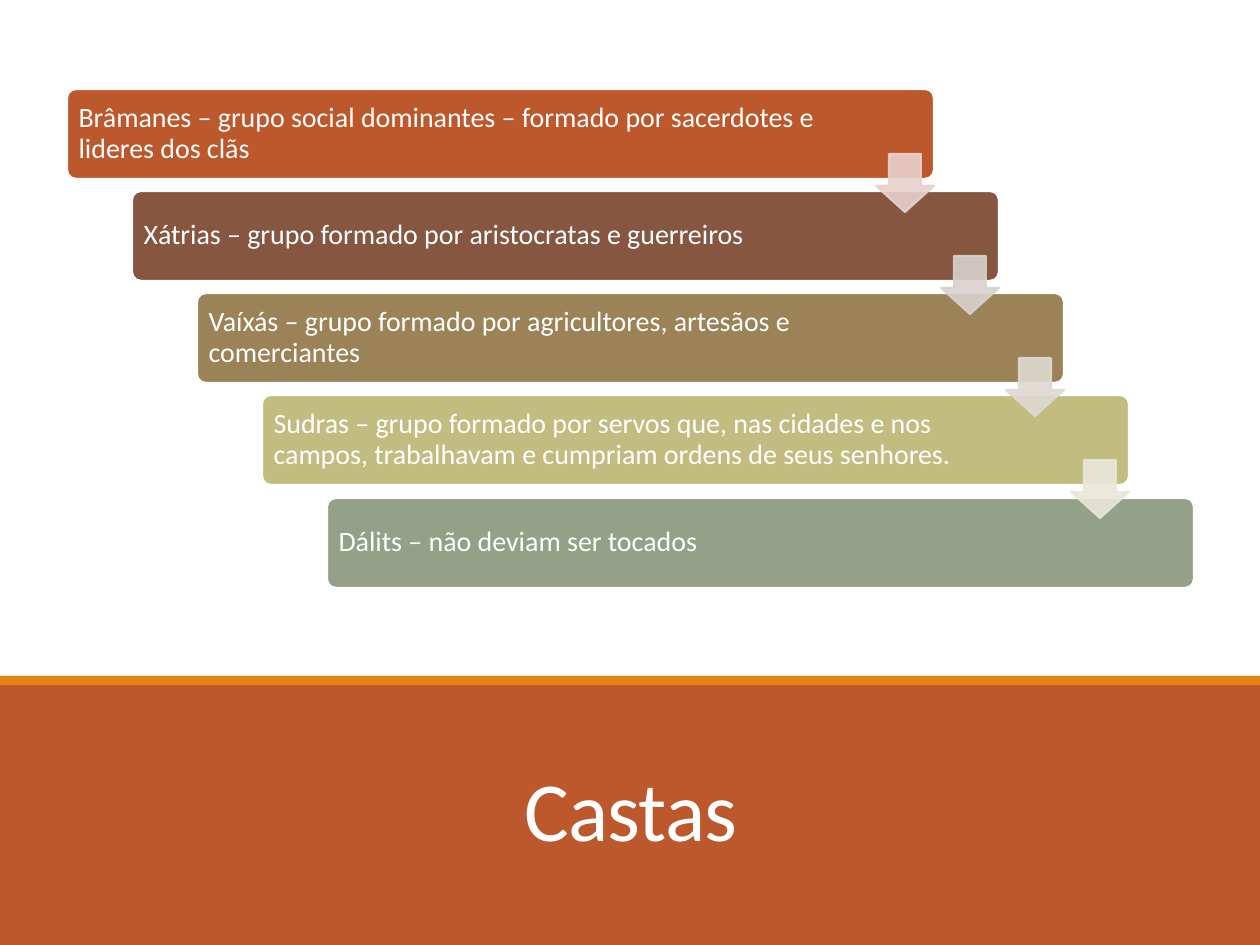
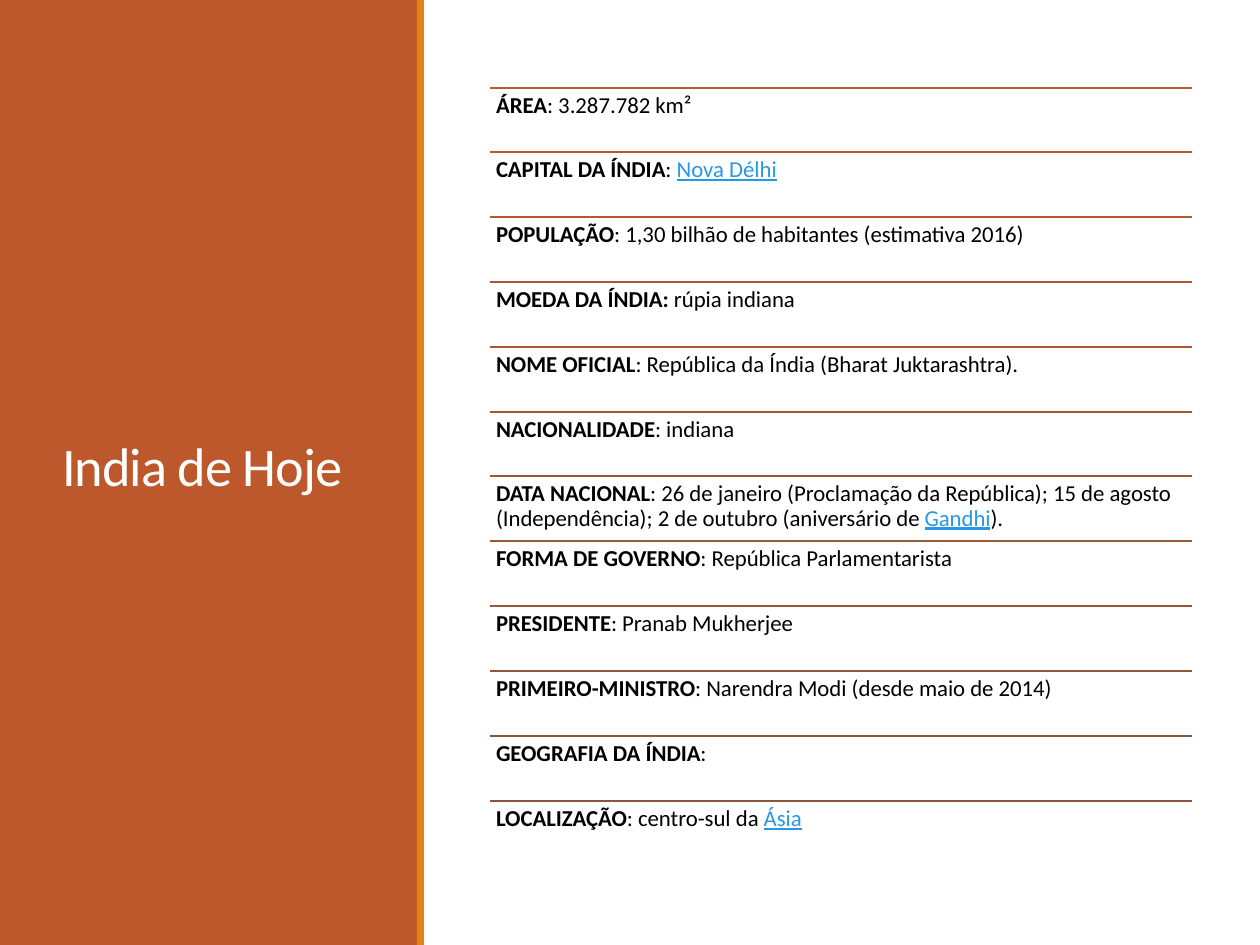
from lxml import etree
from pptx import Presentation
from pptx import util as u
from pptx.dml.color import RGBColor
from pptx.enum import shapes, text
from pptx.oxml.ns import qn

SCALE = u.Inches(1) / 126  # EMU in one px
WIDTH, HEIGHT = 1260, 945
FONT = "Calibri"
COLORS = {
    "panel": "BD582C", "accent": "E48312", "white": "FFFFFF",
    "black": "000000", "link": "2998E3", "last_rule": "865640",
}
TITLE_FORMAT = {"name": FONT, "bold": False, "color": "white"}
CASTE_FORMAT = {"name": FONT, "size": u.Pt(16), "color": "white"}
FACT_FORMATS = {
    "label": {"name": FONT, "size": u.Pt(13), "bold": True, "color": "black"},
    "plain": {"name": FONT, "size": u.Pt(13), "bold": False, "color": "black"},
    "link": {"name": FONT, "size": u.Pt(13), "bold": False, "color": "link",
             "underline": True},
}

# Text, bar colour, colour of the arrow to the next bar, right inset
CASTES = [
    ("Brâmanes – grupo social dominantes – formado por sacerdotes e lideres dos clãs",
     "BD582C", "E8D1CD", 111),
    ("Xátrias – grupo formado por aristocratas e guerreiros",
     "865640", "D9D1CF", 131),
    ("Vaíxás – grupo formado por agricultores, artesãos e comerciantes",
     "9B8357", "DED9D1", 131),
    ("Sudras – grupo formado por servos que, nas cidades e nos campos, "
     "trabalhavam e cumpriam ordens de seus senhores.",
     "C2BC80", "E9E7D8", 131),
    ("Dálits – não deviam ser tocados", "94A088", None, 131),
]

# Label, plain text, linked text, closing text
FACTS = [
    ("ÁREA", ": 3.287.782 km²"),
    ("CAPITAL DA ÍNDIA", ": ", "Nova Délhi"),
    ("POPULAÇÃO", ": 1,30 bilhão de habitantes (estimativa 2016)"),
    ("MOEDA DA ÍNDIA: ", "rúpia indiana"),
    ("NOME OFICIAL", ": República da Índia (Bharat Juktarashtra)."),
    ("NACIONALIDADE", ": indiana"),
    ("DATA NACIONAL", ": 26 de janeiro (Proclamação da República); 15 de agosto "
     "(Independência); 2 de outubro (aniversário de ", "Gandhi", ")."),
    ("FORMA DE GOVERNO", ": República Parlamentarista"),
    ("PRESIDENTE", ": Pranab Mukherjee"),
    ("PRIMEIRO-MINISTRO", ": Narendra Modi (desde maio de 2014)"),
    ("GEOGRAFIA DA ÍNDIA", ":"),
    ("LOCALIZAÇÃO", ": centro-sul da ", "Ásia"),
]
RUN_STYLES = ("label", "plain", "link", "plain")


def px(*lengths):
    return [u.Emu(round(length * SCALE)) for length in lengths]


def rgb(color):
    return RGBColor.from_string(COLORS.get(color, color))


def blend(start, end, share):
    """Mix two hex colours; share 0 gives start and 1 gives end."""
    pairs = zip(rgb(start), rgb(end))
    return "".join(f"{round(a + (b - a) * share):02X}" for a, b in pairs)


def add_run(paragraph, content, formats):
    run = paragraph.add_run()
    run.text = content
    for name, value in formats.items():
        if name == "color":
            run.font.color.rgb = rgb(value)
        else:
            setattr(run.font, name, value)
    return run


def set_frame(frame, anchor, insets):
    left, top, right, bottom = px(*insets)
    settings = {
        "word_wrap": True, "auto_size": text.MSO_AUTO_SIZE.NONE,
        "vertical_anchor": anchor, "margin_left": left, "margin_top": top,
        "margin_right": right, "margin_bottom": bottom,
    }
    for name, value in settings.items():
        setattr(frame, name, value)


def add_block(slide, kind, box, fill, line=None, adjustments=()):
    shape = slide.shapes.add_shape(kind, *px(*box))
    shape.shadow.inherit = False
    shape.fill.solid()
    shape.fill.fore_color.rgb = rgb(fill)
    if line:
        shape.line.color.rgb = rgb(line)
        shape.line.width = u.Pt(1.25)
    else:
        shape.line.fill.background()
    for index, value in enumerate(adjustments):
        shape.adjustments[index] = value
    return shape


def add_rule(slide, left, top, width, color):
    line = slide.shapes.add_connector(
        shapes.MSO_CONNECTOR.STRAIGHT, *px(left, top, left + width, top))
    line.line.color.rgb = rgb(color)
    line.line.width = u.Pt(1.25)
    etree.SubElement(line.element.spPr, qn("a:effectLst"))


def add_titled_slide(presentation, title, panel, stripe, box, size, align, anchor):
    """Add a slide with a coloured panel, its accent stripe and a title."""
    slide = presentation.slides.add_slide(presentation.slide_layouts[5])
    for area, color in ((panel, "panel"), (stripe, "accent")):
        add_block(slide, shapes.MSO_SHAPE.RECTANGLE, area, color)
    shape = slide.shapes.title
    shape.element.getparent().append(shape.element)  # in front of the panel
    shape.left, shape.top, shape.width, shape.height = px(*box)
    set_frame(shape.text_frame, anchor, (12, 6, 12, 6))
    paragraph = shape.text_frame.paragraphs[0]
    paragraph.alignment = align
    paragraph.line_spacing = 0.85
    run = add_run(paragraph, title, {**TITLE_FORMAT, "size": u.Pt(size)})
    run.font._element.set("spc", "-50")
    return slide


def add_caste_bar(slide, box, content, color, right_inset):
    bar = add_block(slide, shapes.MSO_SHAPE.ROUNDED_RECTANGLE, box, color,
                    "white", [0.1])
    set_frame(bar.text_frame, text.MSO_ANCHOR.MIDDLE, (9, 9, right_inset, 9))
    paragraph = bar.text_frame.paragraphs[0]
    paragraph.alignment = text.PP_ALIGN.LEFT
    paragraph.line_spacing = 0.9
    add_run(paragraph, content, CASTE_FORMAT)


def add_step_arrow(slide, box, color):
    arrow = add_block(slide, shapes.MSO_SHAPE.DOWN_ARROW, box, color, color,
                      [0.55, 0.45])
    for tone in arrow.element.spPr.iter(qn("a:srgbClr")):
        etree.SubElement(tone, qn("a:alpha"), val="90000")


def add_fact(slide, box, parts):
    shape = slide.shapes.add_textbox(*px(*box))
    set_frame(shape.text_frame, text.MSO_ANCHOR.TOP, (6, 6, 6, 6))
    paragraph = shape.text_frame.paragraphs[0]
    paragraph.line_spacing = 0.9
    for content, style in zip(parts, RUN_STYLES):
        add_run(paragraph, content, FACT_FORMATS[style])


def build_castes(presentation):
    slide = add_titled_slide(
        presentation, "Castas", (0, 683, WIDTH, 262), (0, 676, WIDTH, 9),
        (111, 723, 1040, 142), 48, text.PP_ALIGN.CENTER, text.MSO_ANCHOR.BOTTOM)
    bar_width, bar_height, arrow_size = 867, 90, 58
    corners = [(67 + 65 * i, 89 + 409 * i // 4) for i in range(len(CASTES))]
    # Staircase of bars
    for (left, top), (content, color, _, inset) in zip(corners, CASTES):
        add_caste_bar(slide, (left, top, bar_width, bar_height), content, color, inset)
    # Arrows over the right ends, in front of all bars
    for (left, top), (_, _, color, _) in zip(corners, CASTES):
        if color:
            add_step_arrow(slide, (left + bar_width - arrow_size, top + 65,
                                   arrow_size, arrow_size), color)


def build_india_today(presentation):
    slide = add_titled_slide(
        presentation, "India de Hoje", (0, 0, 418, HEIGHT), (417, 0, 7, HEIGHT),
        (50, 72, 319, 795), 31, text.PP_ALIGN.LEFT, text.MSO_ANCHOR.MIDDLE)
    left, width, last = 490, 702, len(FACTS) - 1
    # Facts, each under a rule that darkens down the list
    for index, parts in enumerate(FACTS):
        top = 88 + 713 * index // last
        add_rule(slide, left, top, width, blend("panel", "last_rule", index / last))
        add_fact(slide, (left, top, width, 64), parts)


def main():
    presentation = Presentation()
    presentation.slide_width, presentation.slide_height = px(WIDTH, HEIGHT)
    build_castes(presentation)
    build_india_today(presentation)
    presentation.save("out.pptx")


if __name__ == "__main__":
    main()
